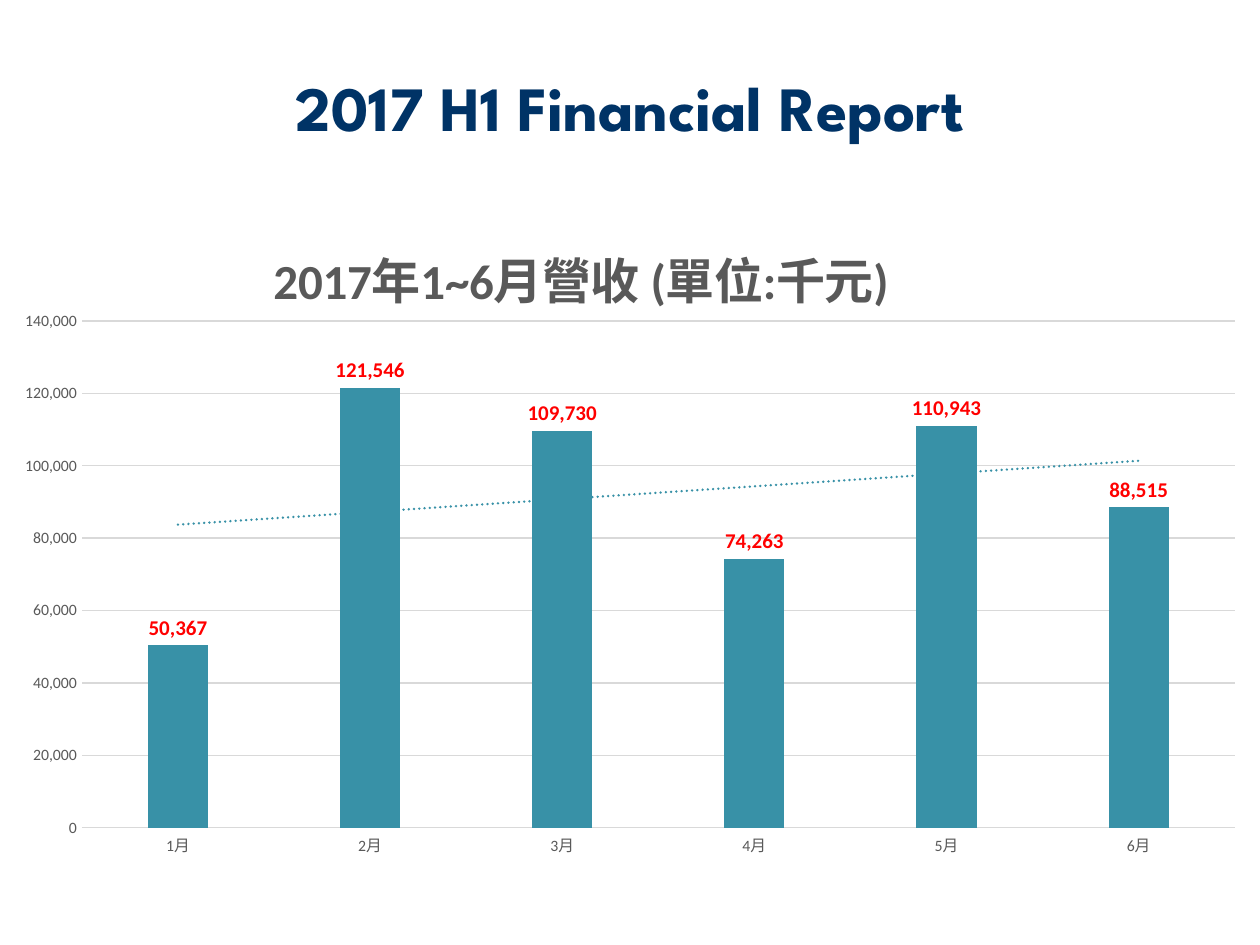
from lxml.etree import fromstring
from pptx import Presentation
from pptx.chart.data import CategoryChartData
from pptx.dml.color import RGBColor as RGB
from pptx.enum.chart import XL_CHART_TYPE as CT, XL_LABEL_POSITION as LP, XL_TICK_MARK as TM
from pptx.enum.text import MSO_ANCHOR as MA, PP_ALIGN as PA
from pptx.oxml.ns import nsdecls, qn
from pptx.util import Emu, Pt

COLORS = {"navy": "003366", "teal": "3891A7", "red": "FF0000", "gray": "595959", "grid": "D9D9D9"}
REVENUE = {"1月": 50367, "2月": 121546, "3月": 109730, "4月": 74263, "5月": 110943, "6月": 88515}
NUMBER_FORMAT = "#,##0"


def px(n):
    """Turn pixels at 126 to the inch into EMU."""
    return Emu(round(n * 914400 / 126))


def color(name):
    """Return a named colour."""
    return RGB.from_string(COLORS[name])


def set_attrs(obj, **values):
    """Set several attributes of an object."""
    for name, value in values.items():
        setattr(obj, name, value)


def set_font(font, size, fill, bold=False, name="Calibri"):
    """Format a font."""
    set_attrs(font, size=Pt(size), bold=bold, name=name)
    font.fill.solid()
    font.fill.fore_color.rgb = color(fill)


def set_line(line, fill, width):
    """Format a line."""
    line.color.rgb = color(fill)
    line.width = Pt(width)


def add_heading(slide, text, x, y, w, h):
    """Add the slide heading."""
    tf = slide.shapes.add_textbox(px(x), px(y), px(w), px(h)).text_frame
    set_attrs(tf, word_wrap=True, vertical_anchor=MA.MIDDLE)
    p = tf.paragraphs[0]
    p.alignment = PA.CENTER
    r = p.add_run()
    r.text = text
    set_font(r.font, 36, "navy", True, "League Spartan")


def set_layout(parent, index, inner=False, **box):
    """Place a chart part by fractions of the chart area."""
    for old in parent.findall(qn("c:layout")):
        parent.remove(old)
    target = '<c:layoutTarget val="inner"/>' if inner else ""
    modes = "".join(f'<c:{k}Mode val="edge"/>' for k in "xy")
    sizes = "".join(f'<c:{k} val="{v}"/>' for k, v in box.items())
    parent.insert(index, fromstring(
        f'<c:layout {nsdecls("c")}><c:manualLayout>{target}{modes}{sizes}</c:manualLayout></c:layout>'))


def add_trend(series):
    """Add a dotted linear trend line to a series."""
    ser = series._element
    ser.find(qn("c:cat")).addprevious(fromstring(
        f'<c:trendline {nsdecls("c", "a")}><c:spPr><a:ln w="{Pt(1.5)}" cap="rnd"><a:solidFill>'
        f'<a:srgbClr val="{COLORS["teal"]}"/></a:solidFill><a:prstDash val="sysDot"/></a:ln></c:spPr>'
        '<c:trendlineType val="linear"/><c:dispRSqr val="0"/><c:dispEq val="0"/></c:trendline>'))


def style_title(chart, text):
    """Write and place the chart title."""
    title = chart.chart_title
    p = title.text_frame.paragraphs[0]
    r = p.add_run()
    r.text = text
    set_font(r.font, 28, "gray", True)
    title.include_in_layout = False
    set_layout(title._element, 1, x=0.21, y=0.05)


def style_axes(chart):
    """Format both axes and the gridlines."""
    for axis in (chart.category_axis, chart.value_axis):
        set_attrs(axis, major_tick_mark=TM.NONE, minor_tick_mark=TM.NONE)
        set_font(axis.tick_labels.font, 9, "gray")
    set_line(chart.category_axis.format.line, "grid", 0.75)
    axis = chart.value_axis
    set_attrs(axis, minimum_scale=0, maximum_scale=140000, major_unit=20000, has_major_gridlines=True)
    axis.format.line.fill.background()
    set_line(axis.major_gridlines.format.line, "grid", 0.75)
    set_attrs(axis.tick_labels, number_format=NUMBER_FORMAT, number_format_is_linked=False)


def style_columns(plot):
    """Format the columns, their labels and the trend line."""
    set_attrs(plot, gap_width=219, overlap=-27, vary_by_categories=False)
    series = plot.series[0]
    series.format.fill.solid()
    series.format.fill.fore_color.rgb = color("teal")
    labels = series.data_labels
    set_attrs(labels, show_value=True, position=LP.OUTSIDE_END,
              number_format=NUMBER_FORMAT, number_format_is_linked=False)
    set_font(labels.font, 12, "red", True)
    add_trend(series)


def add_revenue_chart(slide, title, x, y, w, h):
    """Add the monthly revenue column chart."""
    data = CategoryChartData(number_format=NUMBER_FORMAT)
    data.categories = list(REVENUE)
    data.add_series("Series 1", list(REVENUE.values()))
    chart = slide.shapes.add_chart(CT.COLUMN_CLUSTERED, px(x), px(y), px(w), px(h), data).chart
    chart.has_legend = False
    set_font(chart.font, 10, "gray")
    style_title(chart, title)
    style_axes(chart)
    style_columns(chart.plots[0])
    plot_area = chart._chartSpace.chart.plotArea
    set_layout(plot_area, 0, True, x=0.065, y=0.187, w=0.915, h=0.752)


def main():
    """Build the slide."""
    prs = Presentation()
    set_attrs(prs, slide_width=px(1260), slide_height=px(945))
    slide = prs.slides.add_slide(prs.slide_layouts[6])
    add_heading(slide, "2017 H1 Financial Report", 63, 38, 1134, 137)
    add_revenue_chart(slide, "2017年1~6月營收 (單位:千元)", 0, 195, 1260, 674)
    prs.save("out.pptx")


if __name__ == "__main__":
    main()
